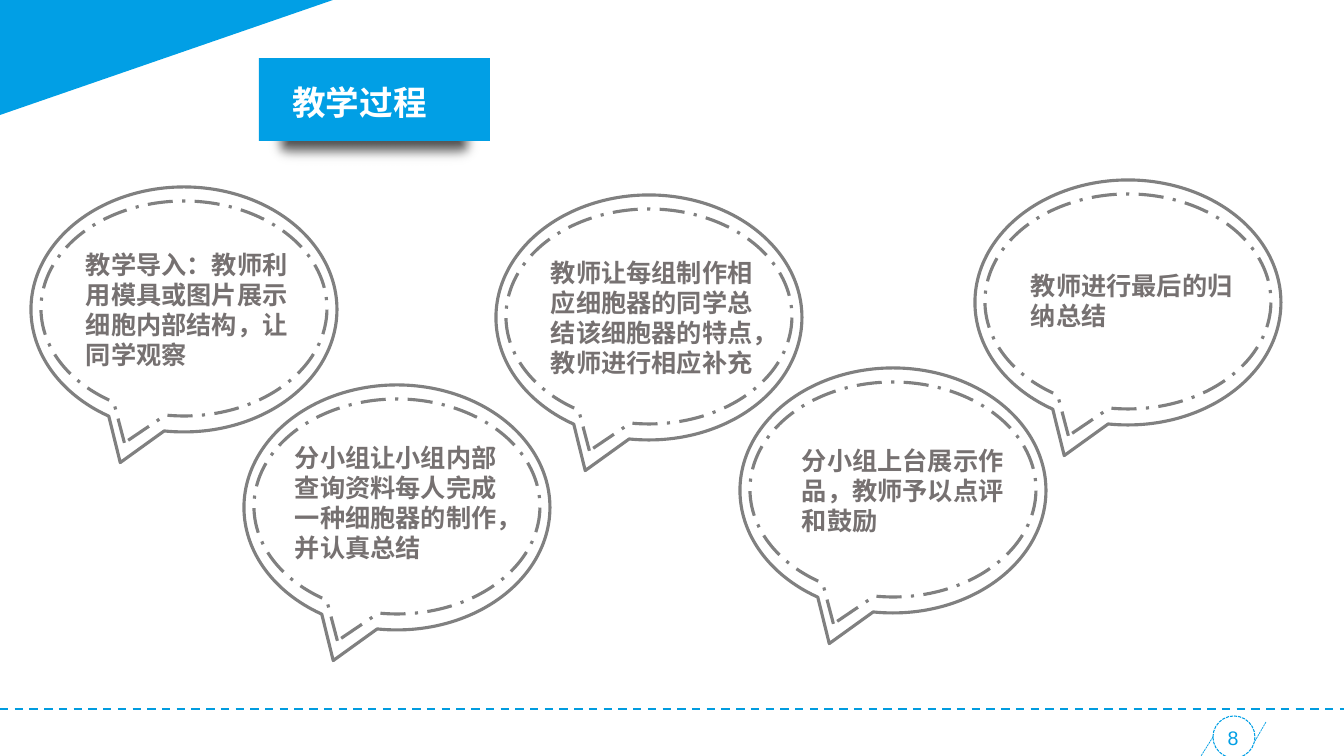
from dataclasses import dataclass

from lxml import etree
from pptx import Presentation
from pptx.dml.color import RGBColor
from pptx.enum.dml import MSO_LINE
from pptx.enum.shapes import MSO_CONNECTOR, MSO_SHAPE
from pptx.enum.text import MSO_ANCHOR, MSO_AUTO_SIZE, PP_ALIGN
from pptx.oxml import parse_xml
from pptx.oxml.ns import nsdecls, qn
from pptx.util import Pt

RECT, OVAL = MSO_SHAPE.RECTANGLE, MSO_SHAPE.OVAL
TRIANGLE, CALLOUT = MSO_SHAPE.RIGHT_TRIANGLE, MSO_SHAPE.OVAL_CALLOUT
STRAIGHT = MSO_CONNECTOR.STRAIGHT
DASH, FINE_DASH, DASH_DOT = MSO_LINE.DASH, MSO_LINE.SQUARE_DOT, MSO_LINE.LONG_DASH_DOT
CENTER, LEFT = PP_ALIGN.CENTER, PP_ALIGN.LEFT
TOP, MIDDLE = MSO_ANCHOR.TOP, MSO_ANCHOR.MIDDLE


@dataclass(frozen=True)
class Theme:
    font: str = "Arial"
    blue: str = "019FE5"
    rule: str = "019CDF"
    outline: str = "808080"
    ink: str = "767171"
    white: str = "FFFFFF"
    title_pt: int = 24
    step_pt: int = 18
    page_pt: int = 14


THEME = Theme()

# Content: wording, bubble corner, text corner, text height (px)
HEADING = "教学过程"
PAGE = "8"
STEPS = [
    ("教学导入：教师利用模具或图片展示细胞内部结构，让同学观察", (31, 187), (76, 244), 132),
    ("分小组让小组内部查询资料每人完成一种细胞器的制作，并认真总结", (244, 385), (285, 437), 132),
    ("教师让每组制作相应细胞器的同学总结该细胞器的特点，教师进行相应补充",
     (496, 195), (541, 252), 132),
    ("分小组上台展示作品，教师予以点评和鼓励", (740, 368), (792, 440), 102),
    ("教师进行最后的归纳总结", (975, 180), (1021, 265), 72),
]
BUBBLE_W, BUBBLE_H = 306, 245
INSET_X, INSET_Y = 10, 14
STEP_W = 243

# Footer lines: start, end, colour, width, dash
FOOTER_LINES = [
    ((0, 709), (1344, 709), THEME.rule, 1.5, DASH),
    ((1213, 737), (1201, 756), THEME.blue, 0.5, FINE_DASH),
    ((1266, 722), (1255, 741), THEME.blue, 0.5, FINE_DASH),
]

SLIDE_W, SLIDE_H = 1344, 756
EMU_PER_PX = 12192000 / SLIDE_W


def px(*lengths):
    return [round(length * EMU_PER_PX) for length in lengths]


def color(code):
    return RGBColor.from_string(code)


def style_line(line, code, width, dash=None):
    line.color.rgb = color(code)
    line.width = Pt(width)
    if dash:
        line.dash_style = dash


def add_panel(kind, box, fill=None, outline=None):
    panel = slide.shapes.add_shape(kind, *px(*box))
    panel.shadow.inherit = False
    if fill:
        panel.fill.solid()
        panel.fill.fore_color.rgb = color(fill)
    else:
        panel.fill.background()
    if outline:
        style_line(panel.line, *outline)
    else:
        panel.line.fill.background()
    return panel


def write(holder, text, size, code, bold=False, align=LEFT, anchor=TOP):
    frame = holder.text_frame
    frame.word_wrap = True
    frame.auto_size = MSO_AUTO_SIZE.NONE
    frame.vertical_anchor = anchor
    paragraph = frame.paragraphs[0]
    paragraph.alignment = align
    run = paragraph.add_run()
    run.text = text
    run.font.name = THEME.font
    run.font.size = Pt(size)
    run.font.bold = bold
    run.font.color.rgb = color(code)
    return paragraph


deck = Presentation()
deck.slide_width, deck.slide_height = px(SLIDE_W, SLIDE_H)
slide = deck.slides.add_slide(deck.slide_layouts[5])

# Corner wedge
wedge = add_panel(TRIANGLE, (109, -109, 115, 333), THEME.blue)
wedge.rotation = 90

# Footer
for start, end, code, width, dash in FOOTER_LINES:
    rule = slide.shapes.add_connector(STRAIGHT, *px(*start, *end))
    style_line(rule.line, code, width, dash)
    etree.SubElement(rule.element.spPr, qn("a:effectLst"))
add_panel(OVAL, (1213, 716, 42, 42), outline=(THEME.blue, 0.75, FINE_DASH))
page_box = slide.shapes.add_textbox(*px(1152, 721, 162, 40))
write(page_box, PAGE, THEME.page_pt, THEME.blue, align=CENTER)

# Heading banner with a soft shade beneath it
shade = add_panel(RECT, (261, 94, 226, 77), THEME.outline)
shade_props = shade.element.spPr
shade_props.replace(shade_props.find(qn("a:solidFill")), parse_xml(
    f'<a:gradFill {nsdecls("a")} rotWithShape="1"><a:gsLst>'
    '<a:gs pos="0"><a:srgbClr val="000000"><a:alpha val="77000"/></a:srgbClr></a:gs>'
    '<a:gs pos="96000"><a:srgbClr val="D9D9D9"/></a:gs></a:gsLst>'
    '<a:path path="shape"><a:fillToRect l="50000" t="50000" r="50000" b="50000"/></a:path>'
    '</a:gradFill>'))
soft_edge = etree.SubElement(shade_props.find(qn("a:effectLst")), qn("a:softEdge"))
soft_edge.set("rad", "127000")
add_panel(RECT, (259, 58, 231, 83), THEME.blue)

heading = slide.shapes.title
heading.left, heading.top, heading.width, heading.height = px(273, 71, 173, 54)
heading_line = write(heading, HEADING, THEME.title_pt, THEME.white, True, CENTER, MIDDLE)
heading_line.line_spacing = 1.2
heading.element.getparent().append(heading.element)

# Step bubbles: solid outline, dashed inner outline, wording
for wording, (left, top), text_corner, text_h in STEPS:
    add_panel(CALLOUT, (left, top, BUBBLE_W, BUBBLE_H), THEME.white, (THEME.outline, 2.25))
    inner = (left + INSET_X, top + INSET_Y, BUBBLE_W - 2 * INSET_X, BUBBLE_H - 30)
    add_panel(CALLOUT, inner, THEME.white, (THEME.outline, 2.25, DASH_DOT))
    step_box = slide.shapes.add_textbox(*px(*text_corner, STEP_W, text_h))
    write(step_box, wording, THEME.step_pt, THEME.ink, bold=True)

deck.save("out.pptx")
